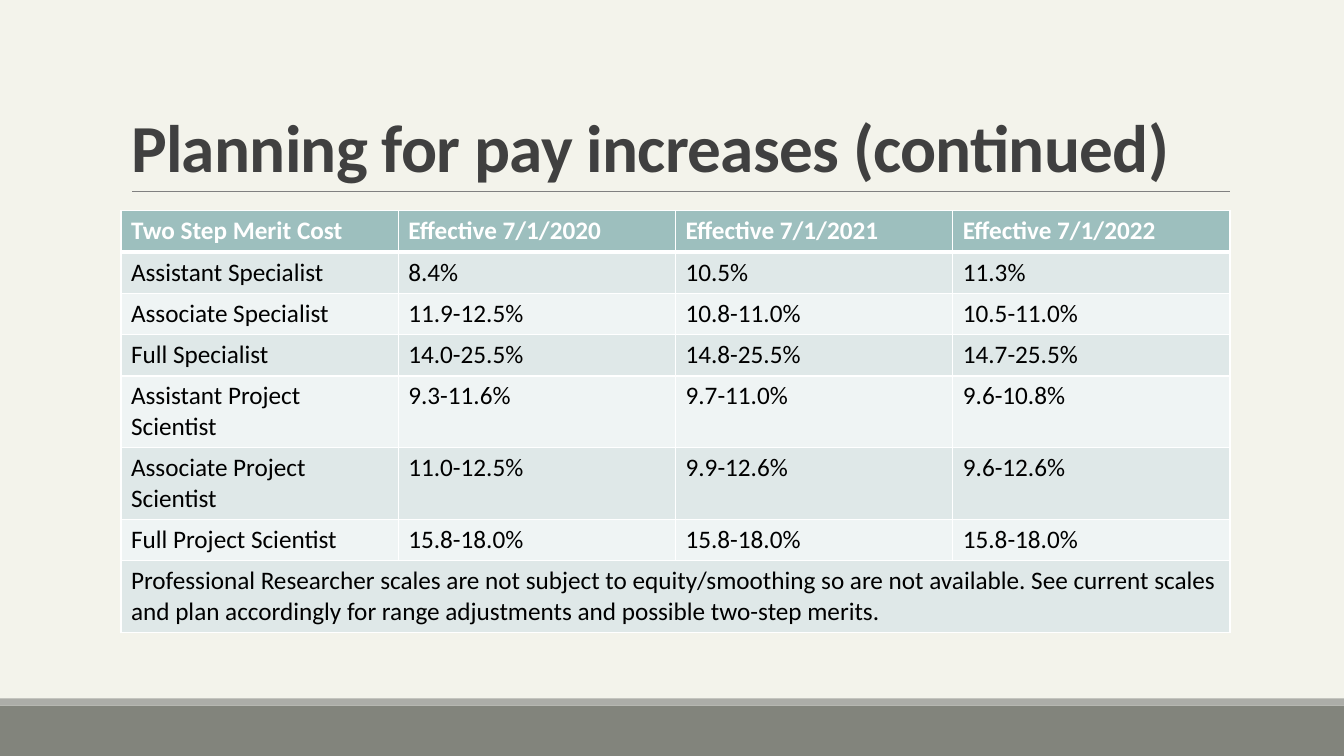
"""Build the pay increase planning slide with its merit cost table."""
from lxml.etree import SubElement as Sub
from pptx import Presentation
from pptx.dml.color import RGBColor as RGB
from pptx.enum.shapes import MSO_CONNECTOR as Link, MSO_SHAPE as Form
from pptx.enum.text import MSO_ANCHOR as Anchor, MSO_AUTO_SIZE as Fit, PP_ALIGN as Align
from pptx.oxml.ns import qn
from pptx.util import Inches, Pt

TITLE = "Planning for pay increases (continued)"
HEAD = ("Two Step Merit Cost", "Effective 7/1/2020", "Effective 7/1/2021", "Effective 7/1/2022")
BODY = [
    ("Assistant Specialist", "8.4%", "10.5%", "11.3%"),
    ("Associate Specialist", "11.9-12.5%", "10.8-11.0%", "10.5-11.0%"),
    ("Full Specialist", "14.0-25.5%", "14.8-25.5%", "14.7-25.5%"),
    ("Assistant Project Scientist", "9.3-11.6%", "9.7-11.0%", "9.6-10.8%"),
    ("Associate Project Scientist", "11.0-12.5%", "9.9-12.6%", "9.6-12.6%"),
    ("Full Project Scientist", "15.8-18.0%", "15.8-18.0%", "15.8-18.0%"),
]
NOTE = ("Professional Researcher scales are not subject to equity/smoothing so are not available. "
        "See current scales and plan accordingly for range adjustments and possible two-step merits.")

PAPER = RGB(0xF3, 0xF3, 0xEB)
BASE = RGB(0x82, 0x84, 0x7C)
STRIP = RGB(0xAC, 0xAD, 0xA8)
RULE = RGB(0x80, 0x80, 0x80)
INK = RGB(0x40, 0x40, 0x40)
BLACK = RGB(0, 0, 0)
WHITE = RGB(0xFF, 0xFF, 0xFF)
TEAL = RGB(0x9D, 0xBF, 0xBE)
BANDS = (RGB(0xEF, 0xF4, 0xF4), RGB(0xDF, 0xE8, 0xE8))

WIDE, HIGH = 13.33, 7.5
LEFT, COL, ROW = 1.2, 2.75, 0.41
SPAN = COL * len(HEAD)
LINE, TOP = 1.9, 2.09


def style(font, color, **form):
    font.color.rgb = color
    for key, val in {"name": "Calibri", **form}.items():
        setattr(font, key, val)


def edge(cell, low):
    props = cell._tc.get_or_add_tcPr()
    for spot, (side, wide) in enumerate({"L": 1, "R": 1, "T": 1, "B": low}.items()):
        line = Sub(props, qn(f"a:ln{side}"), w=str(Pt(wide)))
        Sub(Sub(line, qn("a:solidFill")), qn("a:srgbClr"), val=str(WHITE))
        props.insert(spot, line)


def bar(slide, top, high, color):
    shape = slide.shapes.add_shape(Form.RECTANGLE, 0, Inches(top), Inches(WIDE), Inches(high))
    shape.shadow.inherit = False
    shape.fill.solid()
    shape.fill.fore_color.rgb = color
    shape.line.fill.background()


def head(slide):
    title = slide.shapes.title
    box = {"left": LEFT, "top": 0.31, "width": SPAN, "height": LINE - 0.31}
    for key, val in box.items():
        setattr(title, key, Inches(val))
    frame = title.text_frame
    frame.text = TITLE
    form = {"vertical_anchor": Anchor.BOTTOM, "word_wrap": True, "auto_size": Fit.NONE}
    for key, val in form.items():
        setattr(frame, key, val)
    para = frame.paragraphs[0]
    para.alignment, para.line_spacing = Align.LEFT, 0.85
    run = para.runs[0]
    style(run.font, INK, size=Pt(48), bold=True)
    run.font._element.set("spc", "-50")


def rule(slide):
    ends = [Inches(x) for x in (LEFT + 0.11, LINE, LEFT + SPAN, LINE)]
    line = slide.shapes.add_connector(Link.STRAIGHT, *ends)
    line.line.color.rgb = RULE
    line.line.width = Pt(0.5)
    Sub(line._element.spPr, qn("a:effectLst"))


def grid(slide):
    rows = [HEAD, *BODY, (NOTE, "", "", "")]
    area = [Inches(x) for x in (LEFT, TOP, SPAN, ROW * len(rows))]
    table = slide.shapes.add_table(len(rows), len(HEAD), *area).table
    for r, row in enumerate(rows):
        top = r == 0
        for c, text in enumerate(row):
            cell = table.cell(r, c)
            cell.fill.solid()
            cell.fill.fore_color.rgb = TEAL if top else BANDS[r % 2]
            edge(cell, 3 if top else 1)
            if text:
                cell.text = text
                font = cell.text_frame.paragraphs[0].runs[0].font
                style(font, WHITE if top else BLACK, size=Pt(18), bold=top)
    last = len(rows) - 1
    table.cell(last, 0).merge(table.cell(last, len(HEAD) - 1))


def main():
    deck = Presentation()
    deck.slide_width, deck.slide_height = Inches(WIDE), Inches(HIGH)
    slide = deck.slides.add_slide(deck.slide_layouts[5])
    back = slide.background.fill
    back.solid()
    back.fore_color.rgb = PAPER
    bar(slide, 7, 0.5, BASE)
    bar(slide, 6.93, 0.07, STRIP)
    rule(slide)
    head(slide)
    grid(slide)
    deck.save("out.pptx")


if __name__ == "__main__":
    main()
